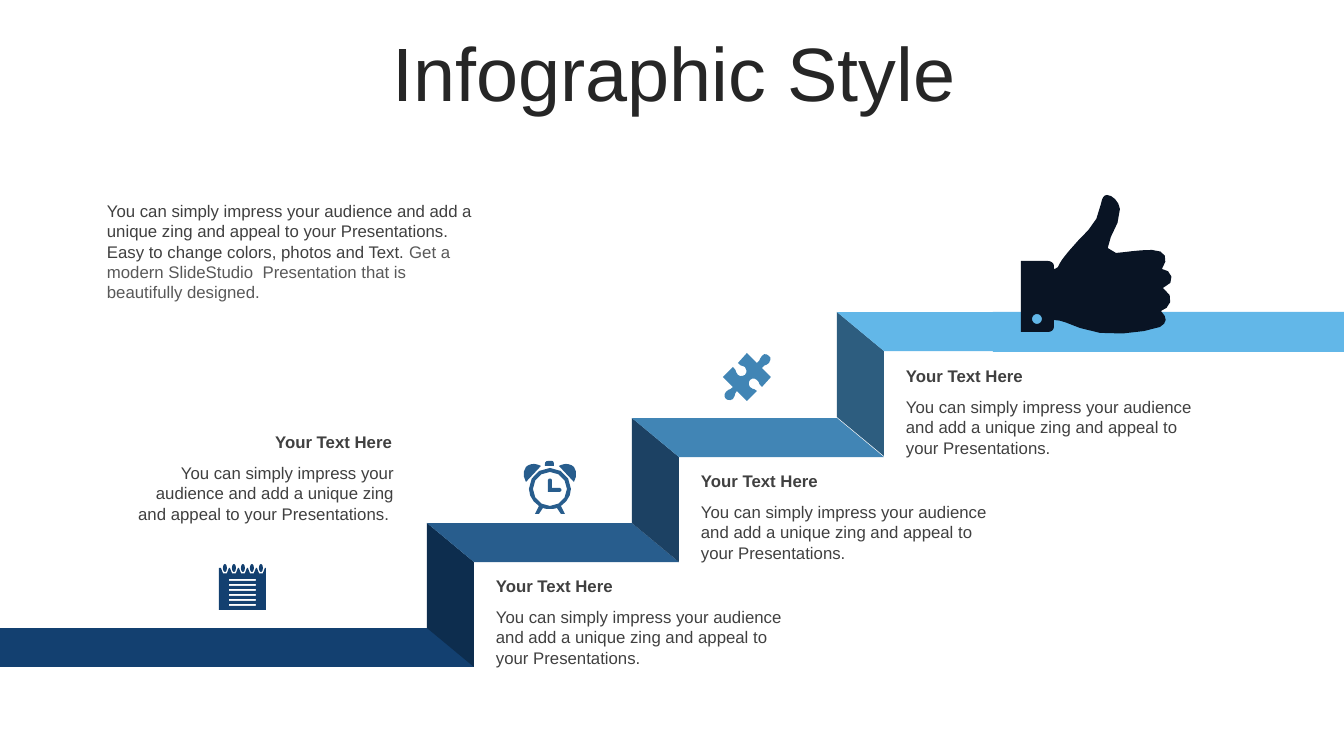
from pptx import Presentation
from pptx.dml.color import RGBColor
from pptx.enum.shapes import MSO_SHAPE
from pptx.enum.text import MSO_ANCHOR, MSO_AUTO_SIZE, PP_ALIGN
from pptx.util import Pt

RECT, SLANT = MSO_SHAPE.RECTANGLE, MSO_SHAPE.PARALLELOGRAM
LEFT, MID, RIGHT = PP_ALIGN.LEFT, PP_ALIGN.CENTER, PP_ALIGN.RIGHT
SCALE = 914400 / 100.8  # EMU in one px
FONT = "Arial"

INK = RGBColor(0x26, 0x26, 0x26)
DARK = RGBColor(0x40, 0x40, 0x40)
GREY = RGBColor(0x59, 0x59, 0x59)
NAVY = RGBColor(0x13, 0x40, 0x70)
BLUE = RGBColor(0x28, 0x5D, 0x8D)
STEEL = RGBColor(0x41, 0x85, 0xB5)
SKY = RGBColor(0x62, 0xB7, 0xE8)
NIGHT = RGBColor(0x09, 0x14, 0x24)

# Content
TITLE = "Infographic Style"
INTRO = [
    ("You can simply impress your audience and add a unique zing and appeal to "
     "your Presentations. Easy to change colors, photos and Text. ", DARK),
    ("Get a modern SlideStudio  Presentation that is beautifully designed.", GREY),
]
HEAD = "Your Text Here"
BODY = ("You can simply impress your audience and add a unique zing and "
        "appeal to your Presentations.")

# Top edge, riser and tread colour of each step, from the bottom up
STEPS = [
    (523, RGBColor(0x0D, 0x2D, 0x4E), BLUE),
    (418, RGBColor(0x1C, 0x41, 0x63), STEEL),
    (312, RGBColor(0x2D, 0x5D, 0x7F), SKY),
]
STEP_X = 427
RUN, RISE = 205, 105    # from one step to the next
DEPTH, SKEW = 39, 47    # height and slant of a tread

# Outlines: a start point, then lines (x, y) and curves (x1, y1, x2, y2, x, y)
HAND = [
    (1107, 195), (1112, 195, 1119, 201, 1120, 209),
    (1123, 226, 1094, 252, 1116, 253), (1128, 252, 1137, 250, 1152, 250),
    (1166, 250, 1169, 259, 1162, 269), (1171, 269, 1178, 283, 1163, 288),
    (1177, 297, 1169, 309, 1161, 311), (1168, 318, 1167, 323, 1160, 327),
    (1144, 333, 1103, 338, 1080, 328), (1069, 324, 1062, 320, 1054, 320),
    (1054, 327), (1054, 330, 1051, 332, 1048, 332), (1021, 332), (1021, 261),
    (1048, 261), (1051, 261, 1054, 263, 1054, 266), (1054, 269),
    (1055, 269, 1057, 268, 1058, 267), (1060, 262, 1064, 257, 1069, 251),
    (1081, 235, 1098, 227, 1101, 204), (1102, 198, 1104, 195, 1107, 195),
]
PUZZLE = [
    (769, 356), (771, 357, 771, 360, 769, 363), (767, 366, 764, 364, 762, 368),
    (771, 377), (762, 387), (758, 384, 760, 382, 757, 380),
    (755, 378, 752, 378, 750, 380), (749, 381, 748, 385, 750, 387),
    (753, 390, 754, 388, 757, 391), (747, 401), (737, 391),
    (734, 394, 736, 395, 733, 399), (731, 401, 727, 400, 726, 399),
    (724, 397, 724, 394, 726, 392), (728, 389, 731, 390, 733, 387),
    (723, 377), (733, 367), (737, 370, 735, 372, 738, 375),
    (740, 377, 743, 376, 745, 375), (747, 373, 747, 370, 745, 367),
    (742, 365, 741, 367, 738, 363), (747, 353), (757, 363),
    (761, 360, 759, 359, 762, 356), (764, 353, 767, 354, 769, 356),
]
CASE = [
    (550, 468), (562, 468, 571, 478, 571, 489), (571, 496, 567, 502, 561, 506),
    (565, 514), (561, 514), (557, 508), (555, 509, 552, 509, 550, 509),
    (547, 509, 545, 509, 543, 508), (539, 514), (535, 514), (539, 506),
    (533, 502, 529, 496, 529, 489), (529, 478, 538, 468, 550, 468),
]
BELL = [
    (534, 464), (536, 464, 539, 465, 541, 466), (526, 482),
    (523, 477, 523, 471, 526, 467), (528, 465, 531, 464, 534, 464),
]
KNOB = [(548, 461), (552, 461), (553, 461, 554, 462, 554, 464), (554, 466),
        (545, 466), (545, 464), (545, 462, 546, 461, 548, 461)]
HANDS = [(548, 480), (548, 478, 552, 478, 552, 480), (552, 488), (560, 488),
         (562, 488, 562, 492, 560, 492), (548, 492)]


def px(n):
    return round(n * SCALE)


def box(x, y, w, h):
    return [px(n) for n in (x, y, w, h)]


def oval(x, y, a, b):
    """Outline around the centre x, y with radii a and b."""
    u, v = 0.55 * a, 0.55 * b
    return [(x, y - b), (x + u, y - b, x + a, y - v, x + a, y),
            (x + a, y + v, x + u, y + b, x, y + b),
            (x - u, y + b, x - a, y + v, x - a, y),
            (x - a, y - v, x - u, y - b, x, y - b)]


def flip(path, axis):
    return [tuple(n if i % 2 else 2 * axis - n for i, n in enumerate(seg))
            for seg in path]


def trace(path, parts):
    """Turn lines and curves into points in EMU."""
    pts = [path[0]]
    for seg in path[1:]:
        if len(seg) == 2:
            pts.append(seg)
            continue
        ends = [pts[-1], seg[:2], seg[2:4], seg[4:]]
        for k in range(1, parts + 1):
            t = k / parts
            mix = ((1 - t) ** 3, 3 * t * (1 - t) ** 2, 3 * t * t * (1 - t), t ** 3)
            pts.append(tuple(sum(m * p[i] for m, p in zip(mix, ends))
                             for i in (0, 1)))
    return [(px(x), px(y)) for x, y in pts]


def paint(shape, color):
    shape.shadow.inherit = False
    shape.fill.solid()
    shape.fill.fore_color.rgb = color
    shape.line.fill.background()
    return shape


def block(kind, x, y, w, h, color):
    return paint(slide.shapes.add_shape(kind, *box(x, y, w, h)), color)


def icon(paths, color, parts=3):
    lines = [trace(p, parts) for p in paths]
    pen = slide.shapes.build_freeform(*lines[0][0], scale=1.0)
    for i, pts in enumerate(lines):
        if i:
            pen.move_to(*pts[0])
        pen.add_line_segments(pts[1:], close=True)
    paint(pen.convert_to_shape(), color)


def write(x, y, w, h, runs, bold=False, align=LEFT):
    frame = slide.shapes.add_textbox(*box(x, y, w, h)).text_frame
    frame.word_wrap = True
    para = frame.paragraphs[0]
    para.alignment = align
    para.font.name, para.font.size, para.font.bold = FONT, Pt(12), bold
    for text, color in runs:
        run = para.add_run()
        run.text = text
        run.font.color.rgb = color


def note(x, y, w, body, align=LEFT):
    write(x, y, w - 2, 30, [(HEAD, DARK)], True, align)
    write(x, y + 31, w, 72, [(body, DARK)], align=align)


deck = Presentation()
deck.slide_width, deck.slide_height = px(1344), px(756)
slide = deck.slides.add_slide(deck.slide_layouts[5])

# Title
title = slide.shapes.title
title.left, title.top, title.width, title.height = box(36, 37, 1276, 80)
title.text = TITLE
title.text_frame.auto_size = MSO_AUTO_SIZE.NONE
title.text_frame.vertical_anchor = MSO_ANCHOR.MIDDLE
para = title.text_frame.paragraphs[0]
para.alignment, para.line_spacing = MID, 0.9
para.font.name, para.font.size, para.font.color.rgb = FONT, Pt(54), INK

# Texts
write(97, 196, 396, 112, INTRO)
note(122, 427, 282, BODY + " ", RIGHT)
for i in range(len(STEPS)):
    note(486 + i * RUN, 571 - i * RISE, 313, BODY)

# Staircase
block(RECT, 993, 312, 351, DEPTH + 1, SKY)
block(RECT, 0, 628, STEP_X + SKEW, DEPTH, NAVY)
for i, (y, side, top) in enumerate(STEPS):
    x = STEP_X + i * RUN
    tall = RISE + DEPTH
    riser = block(SLANT, x + (SKEW - tall) / 2, y + (tall - SKEW) / 2,
                  tall, SKEW, side)
    riser.rotation = 270
    riser.adjustments[0] = DEPTH / SKEW
    tread = block(SLANT, x, y, RUN + SKEW, DEPTH, top)
    tread.adjustments[0] = SKEW / DEPTH
    tread.element.spPr.xfrm.set("flipH", "1")

# Icons
icon([HAND, oval(1037, 319, 5, 5)], NIGHT, 4)
icon([CASE, oval(550, 489, 17, 17), HANDS, BELL, flip(BELL, 550), KNOB], BLUE)
icon([PUZZLE], STEEL)

rings = [225 + 9 * i for i in range(5)]
pad = [(219, 568)]
for x in rings:
    pad += [(x - 4, 568), (x - 4, 576, x + 4, 576, x + 4, 568)]
pad += [(266, 568), (266, 610), (219, 610)]
rules = [[(229, y), (256, y), (256, y + 2), (229, y + 2)]
         for y in range(579, 605, 5)]
icon([pad] + rules + [oval(x, 568, 2, 4) for x in rings], NAVY)

deck.save("out.pptx")
